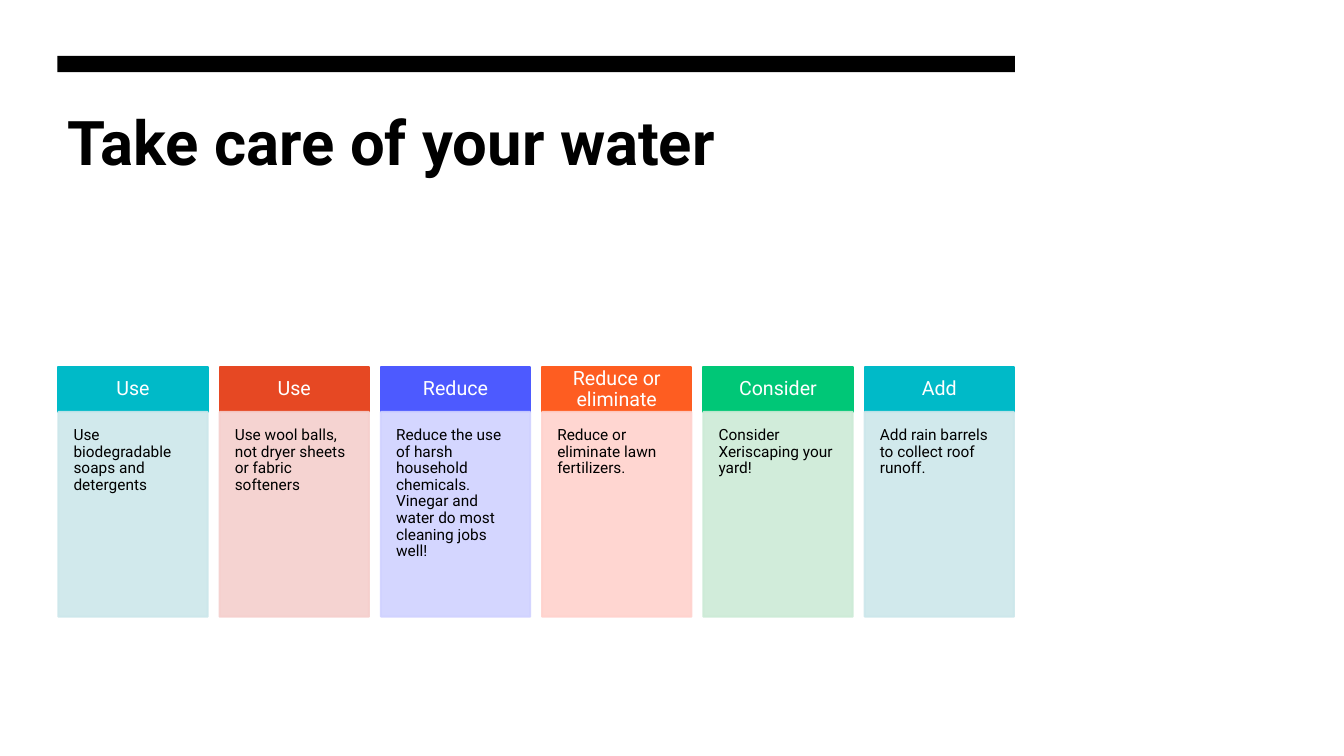
import pptx
import pptx.util
import pptx.dml.color
import pptx.enum.shapes
import pptx.enum.text
import pptx.oxml.ns
import lxml.etree
from dataclasses import dataclass

Pt = pptx.util.Pt
RGBColor = pptx.dml.color.RGBColor
PP_ALIGN = pptx.enum.text.PP_ALIGN
MSO_ANCHOR = pptx.enum.text.MSO_ANCHOR


@dataclass(frozen=True)
class Theme:
    font: str = "Roboto"
    background: str = "FFFFFF"
    dark: str = "000000"
    light: str = "FFFFFF"
    teal: tuple = ("00BAC8", "CCE7EB")
    red: tuple = ("E64823", "F5CFCD")
    blue: tuple = ("4D5AFF", "D0D2FF")
    orange: tuple = ("FE5D21", "FFD2CD")
    green: tuple = ("00C777", "CCEBD6")
    title_size: int = 44
    heading_size: int = 14
    body_size: int = 11
    outline: float = 1.5
    card_opacity: int = 90


THEME = Theme()

TIPS = [
    ("Use", "Use biodegradable soaps and detergents", THEME.teal),
    ("Use", "Use wool balls, not dryer sheets or fabric softeners", THEME.red),
    ("Reduce", "Reduce the use of harsh household chemicals. "
     "Vinegar and water do most cleaning jobs well!", THEME.blue),
    ("Reduce or eliminate", "Reduce or eliminate lawn fertilizers.", THEME.orange),
    ("Consider", "Consider Xeriscaping your yard!", THEME.green),
    ("Add", "Add rain barrels to collect roof runoff.", THEME.teal),
]


def set_text(shape, text, size, color, align, anchor, inset, bold=False):
    frame = shape.text_frame
    frame.text = text
    frame.word_wrap = True
    frame.auto_size = pptx.enum.text.MSO_AUTO_SIZE.NONE
    frame.vertical_anchor = anchor
    frame.margin_left = frame.margin_right = Pt(inset[0])
    frame.margin_top = frame.margin_bottom = Pt(inset[1])
    paragraph = frame.paragraphs[0]
    paragraph.alignment = align
    paragraph.line_spacing = 0.9
    font = paragraph.runs[0].font
    font.name, font.size, font.bold = THEME.font, Pt(size), bold
    font.color.rgb = RGBColor.from_string(color)


def add_box(slide, left, top, width, height, color, opacity=100, outlined=True):
    shape = slide.shapes.add_shape(
        pptx.enum.shapes.MSO_SHAPE.RECTANGLE,
        Pt(left), Pt(top), Pt(width), Pt(height))
    shape.shadow.inherit = False
    shape.fill.solid()
    shape.fill.fore_color.rgb = RGBColor.from_string(color)
    if outlined:
        shape.line.width = Pt(THEME.outline)
        shape.line.color.rgb = RGBColor.from_string(color)
    else:
        shape.line.fill.background()
    if opacity < 100:
        # Transparency of both fill and outline
        for color_element in shape._element.spPr.iter(pptx.oxml.ns.qn("a:srgbClr")):
            alpha = lxml.etree.SubElement(color_element, pptx.oxml.ns.qn("a:alpha"))
            alpha.set("val", str(opacity * 1000))
    return shape


def add_title_region(slide, left, top, width, height):
    # Title under a heavy rule
    bar_height, title_offset = 11.5, 36.7
    title = slide.shapes.title
    title.left, title.top = Pt(left), Pt(top + title_offset)
    title.width, title.height = Pt(width), Pt(height - title_offset)
    set_text(title, "Take care of your water", THEME.title_size, THEME.dark,
             PP_ALIGN.LEFT, MSO_ANCHOR.TOP, (7.2, 3.6), bold=True)
    add_box(slide, left, top, width, bar_height, THEME.dark, outlined=False)


def add_tip_columns(slide, left, top, width, height, tips):
    # Equal columns, each a coloured heading above a tinted card
    gap, heading_height = 8.6, 32
    column_width = (width - gap * (len(tips) - 1)) / len(tips)
    for index, (heading, body, (strong, tint)) in enumerate(tips):
        column_left = left + index * (column_width + gap)
        header = add_box(slide, column_left, top, column_width, heading_height, strong)
        set_text(header, heading, THEME.heading_size, THEME.light,
                 PP_ALIGN.CENTER, MSO_ANCHOR.MIDDLE, (8.6, 8.6))
        card = add_box(slide, column_left, top + heading_height, column_width,
                       height - heading_height, tint, THEME.card_opacity)
        set_text(card, body, THEME.body_size, THEME.dark,
                 PP_ALIGN.LEFT, MSO_ANCHOR.TOP, (10.8, 10.8))


def main():
    presentation = pptx.Presentation()
    presentation.slide_width, presentation.slide_height = Pt(960), Pt(540)
    slide = presentation.slides.add_slide(presentation.slide_layouts[5])
    slide.background.fill.solid()
    slide.background.fill.fore_color.rgb = RGBColor.from_string(THEME.background)
    add_title_region(slide, 41, 40, 684, 152)
    add_tip_columns(slide, 41.75, 262.25, 682.5, 178.25, TIPS)
    presentation.save("out.pptx")


if __name__ == "__main__":
    main()
